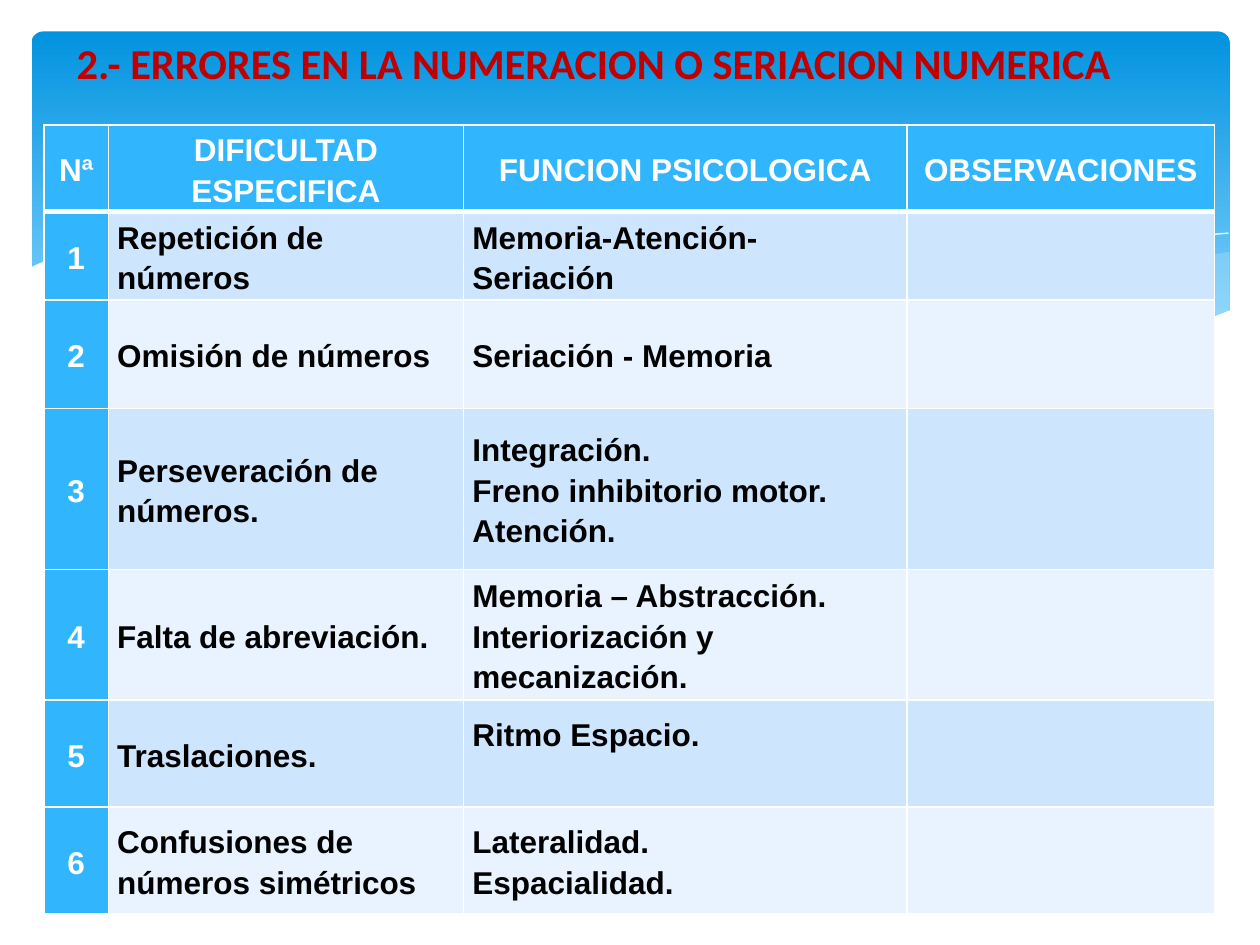
from dataclasses import dataclass
from typing import Optional

from lxml.etree import SubElement
from pptx import Presentation
from pptx.dml.color import RGBColor
from pptx.enum.shapes import MSO_SHAPE
from pptx.enum.text import MSO_ANCHOR, PP_ALIGN
from pptx.oxml.ns import qn
from pptx.util import Inches, Pt


@dataclass(frozen=True)
class Theme:
    white: str = "FFFFFF"
    black: str = "000000"
    title: str = "C00000"
    accent: str = "31B6FD"
    bands: tuple = ("CEE5FE", "E8F3FF")
    wave: str = "C6E7FC"
    gradient: tuple = ("0293E0", "83D3FE")
    title_font: str = "Calibri"
    table_font: str = "Arial"
    title_size: float = 24.3
    table_size: float = 18


@dataclass(frozen=True)
class Wave:
    """Outline in hundredths of an inch; without a fill it is a hairline."""
    points: tuple
    fill: Optional[str] = None
    alpha: int = 100


@dataclass(frozen=True)
class Difficulty:
    name: str
    functions: str
    height: float
    bottom_margin: float = 0


THEME = Theme()

WAVES = (
    Wave(((975, 200), (948, 204), (921, 210), (891, 216), (861, 223), (805, 237),
          (753, 248), (706, 257), (661, 265), (691, 269), (719, 272), (745, 275),
          (769, 277), (803, 278), (835, 277), (863, 275), (889, 272), (913, 267),
          (935, 262), (949, 257), (963, 252), (976, 247), (976, 200)),
         THEME.wave, 29),
    Wave(((893, 273), (866, 269), (837, 265), (807, 260), (775, 254), (741, 247),
          (706, 240), (668, 231), (629, 222), (598, 214), (569, 208), (541, 203),
          (514, 198), (489, 194), (442, 189), (399, 186), (361, 185), (328, 187),
          (299, 189), (286, 191), (323, 196), (362, 203), (404, 211), (449, 222),
          (491, 232), (530, 240), (566, 248), (601, 255), (634, 261), (665, 266),
          (695, 270), (722, 274), (748, 276), (773, 277), (796, 278), (838, 278),
          (867, 276)),
         THEME.wave, 40),
    Wave(((309, 195), (328, 192), (353, 189), (387, 187), (416, 187), (450, 188),
          (489, 190), (533, 194), (582, 200), (636, 208), (695, 219), (760, 233),
          (831, 251), (869, 261), (907, 272))),
    Wave(((613, 257), (653, 246), (695, 235), (748, 223), (806, 210), (866, 199),
          (895, 194), (924, 190), (951, 187), (975, 185))),
    Wave(((977, 246), (959, 253), (940, 259), (920, 265), (899, 269), (875, 273),
          (850, 275), (823, 277), (793, 276), (761, 275), (726, 272), (688, 268),
          (648, 262), (603, 254), (555, 245), (503, 233), (447, 220), (391, 207),
          (340, 197), (292, 190), (250, 186), (211, 184), (177, 184), (146, 185),
          (119, 187), (95, 191), (76, 195), (59, 199), (46, 203), (36, 207),
          (29, 210), (23, 213), (23, 329), (977, 329)),
         THEME.white),
)

HEADERS = ("Nª", "DIFICULTAD ESPECIFICA", "FUNCION PSICOLOGICA", "OBSERVACIONES")
COLUMN_WIDTHS = (0.51, 2.82, 3.52, 2.44)
HEADER_HEIGHT = 0.64
DIFFICULTIES = (
    Difficulty("Repetición de números", "Memoria-Atención-Seriación", 0.7),
    Difficulty("Omisión de números", "Seriación - Memoria", 0.86),
    Difficulty("Perseveración de números.",
               "Integración.\nFreno inhibitorio motor.\nAtención.", 1.28),
    Difficulty("Falta de abreviación.",
               "Memoria – Abstracción.\nInteriorización y mecanización.", 0.96),
    Difficulty("Traslaciones.", "Ritmo Espacio.", 0.85, bottom_margin=0.32),
    Difficulty("Confusiones de números simétricos", "Lateralidad.\nEspacialidad.", 0.85),
)


def rgb(color: str) -> RGBColor:
    return RGBColor.from_string(color)


def format_text(text_frame, font: str, size: float, color: str,
                align=PP_ALIGN.LEFT, spacing: float = 1.0) -> None:
    for paragraph in text_frame.paragraphs:
        paragraph.alignment = align
        paragraph.line_spacing = spacing
        for run in paragraph.runs:
            run.font.name = font
            run.font.size = Pt(size)
            run.font.bold = True
            run.font.color.rgb = rgb(color)


def draw_banner(slide) -> None:
    shape = slide.shapes.add_shape(MSO_SHAPE.ROUNDED_RECTANGLE, Inches(0.25),
                                   Inches(0.25), Inches(9.51), Inches(2.7))
    shape.adjustments[0] = 0.034
    shape.shadow.inherit = False
    shape.line.fill.background()
    shape.fill.gradient()
    shape.fill.gradient_angle = 270
    for stop, color, position in zip(shape.fill.gradient_stops, THEME.gradient, (0, 0.9)):
        stop.color.rgb = rgb(color)
        stop.position = position


def draw_wave(slide, wave: Wave) -> None:
    builder = slide.shapes.build_freeform(*wave.points[0], scale=Inches(0.01))
    builder.add_line_segments(wave.points[1:], close=wave.fill is not None)
    shape = builder.convert_to_shape()
    shape.shadow.inherit = False
    if wave.fill is None:
        shape.fill.background()
        shape.line.color.rgb = rgb(THEME.white)
        shape.line.width = Pt(0)
        return
    shape.line.fill.background()
    shape.fill.solid()
    shape.fill.fore_color.rgb = rgb(wave.fill)
    if wave.alpha < 100:
        color = shape.fill._xPr.find(qn("a:solidFill"))[0]
        SubElement(color, qn("a:alpha"), val=str(wave.alpha * 1000))


def draw_title(slide, text: str) -> None:
    box = slide.shapes.add_textbox(Inches(0.51), Inches(0.26), Inches(9), Inches(0.47))
    frame = box.text_frame
    frame.word_wrap = True
    frame.vertical_anchor = MSO_ANCHOR.MIDDLE
    frame.text = text
    format_text(frame, THEME.title_font, THEME.title_size, THEME.title)


def set_borders(cell, bottom: float, top: float) -> None:
    properties = cell._tc.get_or_add_tcPr()
    sides = (("a:lnL", 1), ("a:lnR", 1), ("a:lnT", top), ("a:lnB", bottom))
    for index, (tag, width) in enumerate(sides):
        line = SubElement(properties, qn(tag), w=str(Pt(width)))
        fill = SubElement(line, qn("a:solidFill"))
        SubElement(fill, qn("a:srgbClr"), val=THEME.white)
        properties.insert(index, line)


def draw_table(slide) -> None:
    heights = (HEADER_HEIGHT, *(item.height for item in DIFFICULTIES))
    table = slide.shapes.add_table(
        len(heights), len(HEADERS), Inches(0.35), Inches(0.99),
        Inches(sum(COLUMN_WIDTHS)), Inches(sum(heights))).table
    for column, width in zip(table.columns, COLUMN_WIDTHS):
        column.width = Inches(width)
    for row, height in zip(table.rows, heights):
        row.height = Inches(height)

    contents = [HEADERS] + [(str(number), item.name, item.functions, "")
                            for number, item in enumerate(DIFFICULTIES, 1)]
    for row, texts in enumerate(contents):
        for column, text in enumerate(texts):
            cell = table.cell(row, column)
            accented = row == 0 or column == 0
            cell.fill.solid()
            cell.fill.fore_color.rgb = rgb(
                THEME.accent if accented else THEME.bands[(row - 1) % 2])
            cell.vertical_anchor = MSO_ANCHOR.MIDDLE
            cell.margin_left = cell.margin_right = Inches(0.07)
            cell.margin_top = cell.margin_bottom = 0
            if column == 2 and row > 0:
                cell.margin_bottom = Inches(DIFFICULTIES[row - 1].bottom_margin)
            cell.text_frame.text = text
            format_text(cell.text_frame, THEME.table_font, THEME.table_size,
                        THEME.white if accented else THEME.black,
                        PP_ALIGN.CENTER if accented else PP_ALIGN.LEFT, 1.15)
            set_borders(cell, bottom=3 if row == 0 else 1, top=3 if row == 1 else 1)


def main() -> None:
    presentation = Presentation()
    presentation.slide_width = Inches(10)
    presentation.slide_height = Inches(7.5)
    slide = presentation.slides.add_slide(presentation.slide_layouts[6])

    # Background banner and waves
    draw_banner(slide)
    for wave in WAVES:
        draw_wave(slide, wave)

    # Title and table of difficulties
    draw_title(slide, "2.- ERRORES EN LA NUMERACION O SERIACION NUMERICA")
    draw_table(slide)
    presentation.save("out.pptx")


if __name__ == "__main__":
    main()
